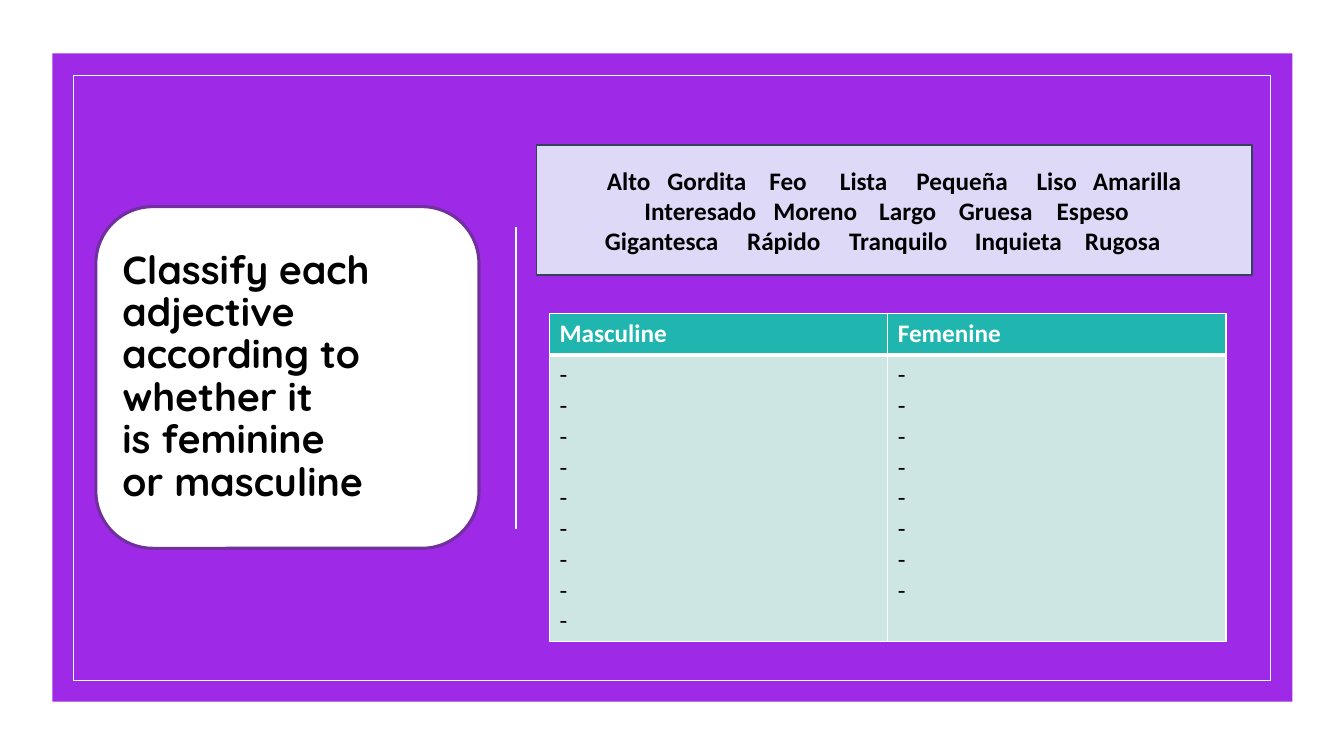
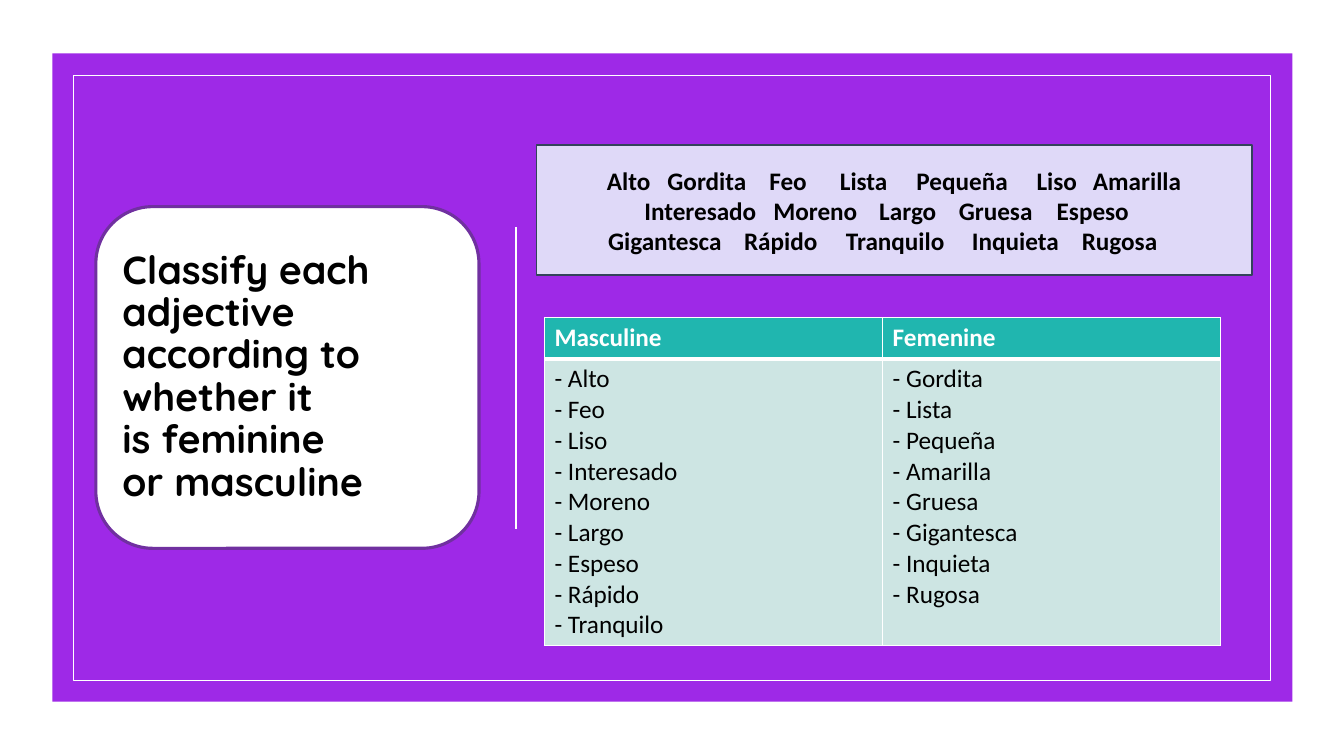
import pptx
import pptx.dml.color
import pptx.enum.shapes
import pptx.enum.text
import pptx.oxml.ns
import pptx.util
import lxml.etree

SLIDE_WIDTH = pptx.util.Inches(13.33)
SLIDE_HEIGHT = pptx.util.Inches(7.5)
WHITE, BLACK = "FFFFFF", "000000"
PURPLE, DARK_PURPLE, LILAC, SLATE = "9E29E7", "7030A0", "DFD9F8", "33435B"
TEAL, PALE_TEAL = "20B6AF", "CDE5E3"
BODY_FONT, TITLE_FONT = "Calibri", "Quicksand"
SHAPES = pptx.enum.shapes.MSO_SHAPE

TITLE_LINES = ["Classify each", "adjective", "according to", "whether it", "is feminine", "or masculine"]
BANK_LINES = [
    ["Alto", "Gordita", "Feo", "Lista", "Pequeña", "Liso", "Amarilla"],
    ["Interesado", "Moreno", "Largo", "Gruesa", "Espeso"],
    ["Gigantesca", "Rápido", "Tranquilo", "Inquieta", "Rugosa"],
]
UPPER_STOPS = [
    [5.25, 9.75, 17.33, 22.58, 28.28, 37.21, 41.41],
    [8.03, 17.63, 25.51, 31.43, 38.71],
]
EXERCISE_STOPS = [5.1, 15.68, 23.26, 32.63, 40.81]
ANSWER_STOPS = [5.33, 15.45, 23.03, 32.41, 40.58]
MASCULINE = ["Alto", "Feo", "Liso", "Interesado", "Moreno", "Largo", "Espeso", "Rápido", "Tranquilo"]
FEMININE = ["Gordita", "Lista", "Pequeña", "Amarilla", "Gruesa", "Gigantesca", "Inquieta", "Rugosa"]


def across(percent):
    return round(SLIDE_WIDTH * percent / 100)


def down(percent):
    return round(SLIDE_HEIGHT * percent / 100)


def color(hex_string):
    return pptx.dml.color.RGBColor.from_string(hex_string)


def add_child(parent, tag, **attributes):
    return lxml.etree.SubElement(parent, pptx.oxml.ns.qn(tag), attributes)


def add_box(slide, kind, left, top, width, height, fill=None, line=None, line_width=1):
    shape = slide.shapes.add_shape(kind, across(left), down(top), across(width), down(height))
    shape.shadow.inherit = False
    if fill:
        shape.fill.solid()
        shape.fill.fore_color.rgb = color(fill)
    else:
        shape.fill.background()
    if line:
        shape.line.color.rgb = color(line)
        shape.line.width = pptx.util.Pt(line_width)
    else:
        shape.line.fill.background()
    return shape


def write_lines(frame, lines, size=18, font=BODY_FONT, ink=BLACK, bold=False, spacing=1.0):
    frame.word_wrap = True
    for index, line in enumerate(lines):
        paragraph = frame.paragraphs[0] if index == 0 else frame.add_paragraph()
        paragraph.alignment = pptx.enum.text.PP_ALIGN.LEFT
        paragraph.line_spacing = spacing
        run = paragraph.add_run()
        run.text = line
        run.font.size = pptx.util.Pt(size)
        run.font.name = font
        run.font.bold = bold
        run.font.color.rgb = color(ink)


def set_tab_stops(paragraph, stops):
    tab_list = add_child(paragraph._p.get_or_add_pPr(), "a:tabLst")
    for stop in stops:
        add_child(tab_list, "a:tab", pos=str(across(stop)), algn="l")


def add_backdrop(slide):
    slide.background.fill.solid()
    slide.background.fill.fore_color.rgb = color(WHITE)
    add_box(slide, SHAPES.RECTANGLE, 3.9, 7.07, 92.27, 85.73, fill=PURPLE)
    divider = slide.shapes.add_connector(
        pptx.enum.shapes.MSO_CONNECTOR.STRAIGHT, across(38.41), down(30), across(38.41), down(70))
    divider.line.color.rgb = color(WHITE)
    divider.line.width = pptx.util.Pt(1.25)
    add_child(divider._element.spPr, "a:effectLst")
    add_box(slide, SHAPES.RECTANGLE, 5.48, 10, 89.05, 80, line=WHITE, line_width=0.5)


def add_title_card(slide):
    card = add_box(slide, SHAPES.ROUNDED_RECTANGLE, 7.13, 27.33, 28.51, 45.2, WHITE, DARK_PURPLE, 2.25)
    card.text_frame.vertical_anchor = pptx.enum.text.MSO_ANCHOR.MIDDLE
    write_lines(card.text_frame, TITLE_LINES, size=28, font=TITLE_FONT, bold=True, spacing=0.9)


def add_word_bank(slide, last_stops):
    bank = add_box(slide, SHAPES.RECTANGLE, 39.91, 19.2, 53.26, 17.2, LILAC, SLATE)
    frame = bank.text_frame
    frame.margin_left = frame.margin_right = 0
    frame.vertical_anchor = pptx.enum.text.MSO_ANCHOR.MIDDLE
    write_lines(frame, ["\t" + "\t".join(words) for words in BANK_LINES], bold=True)
    for paragraph, stops in zip(frame.paragraphs, UPPER_STOPS + [last_stops]):
        set_tab_stops(paragraph, stops)


def style_cell(cell, fill, bottom_width):
    properties = cell._tc.get_or_add_tcPr()
    for side, width in (("L", 1), ("R", 1), ("T", 1), ("B", bottom_width)):
        border = add_child(properties, "a:ln" + side, w=str(pptx.util.Pt(width)))
        add_child(add_child(border, "a:solidFill"), "a:srgbClr", val=WHITE)
    cell.fill.solid()
    cell.fill.fore_color.rgb = color(fill)


def add_gender_table(slide, left, top, columns):
    row_heights = (5.47, 37.87)
    table = slide.shapes.add_table(
        2, len(columns), across(left), down(top), across(50.33), down(sum(row_heights))).table
    for row, height in zip(table.rows, row_heights):
        row.height = down(height)
    for index, (heading, entries) in enumerate(columns):
        header, body = table.cell(0, index), table.cell(1, index)
        style_cell(header, TEAL, 3)
        write_lines(header.text_frame, [heading], ink=WHITE, bold=True)
        style_cell(body, PALE_TEAL, 1)
        body._tc.tcPr.find(pptx.oxml.ns.qn("a:lnT")).set("w", str(pptx.util.Pt(3)))
        write_lines(body.text_frame, entries)


def add_activity(presentation, last_stops, left, top, show_answers):
    slide = presentation.slides.add_slide(presentation.slide_layouts[6])
    columns = [
        (heading, ["- " + word if show_answers else "-" for word in words])
        for heading, words in (("Masculine", MASCULINE), ("Femenine", FEMININE))
    ]
    add_backdrop(slide)
    add_gender_table(slide, left, top, columns)
    add_word_bank(slide, last_stops)
    add_title_card(slide)


def main():
    presentation = pptx.Presentation()
    presentation.slide_width = SLIDE_WIDTH
    presentation.slide_height = SLIDE_HEIGHT
    add_activity(presentation, EXERCISE_STOPS, 40.89, 41.47, False)
    add_activity(presentation, ANSWER_STOPS, 40.51, 42, True)
    presentation.save("out.pptx")


if __name__ == "__main__":
    main()
